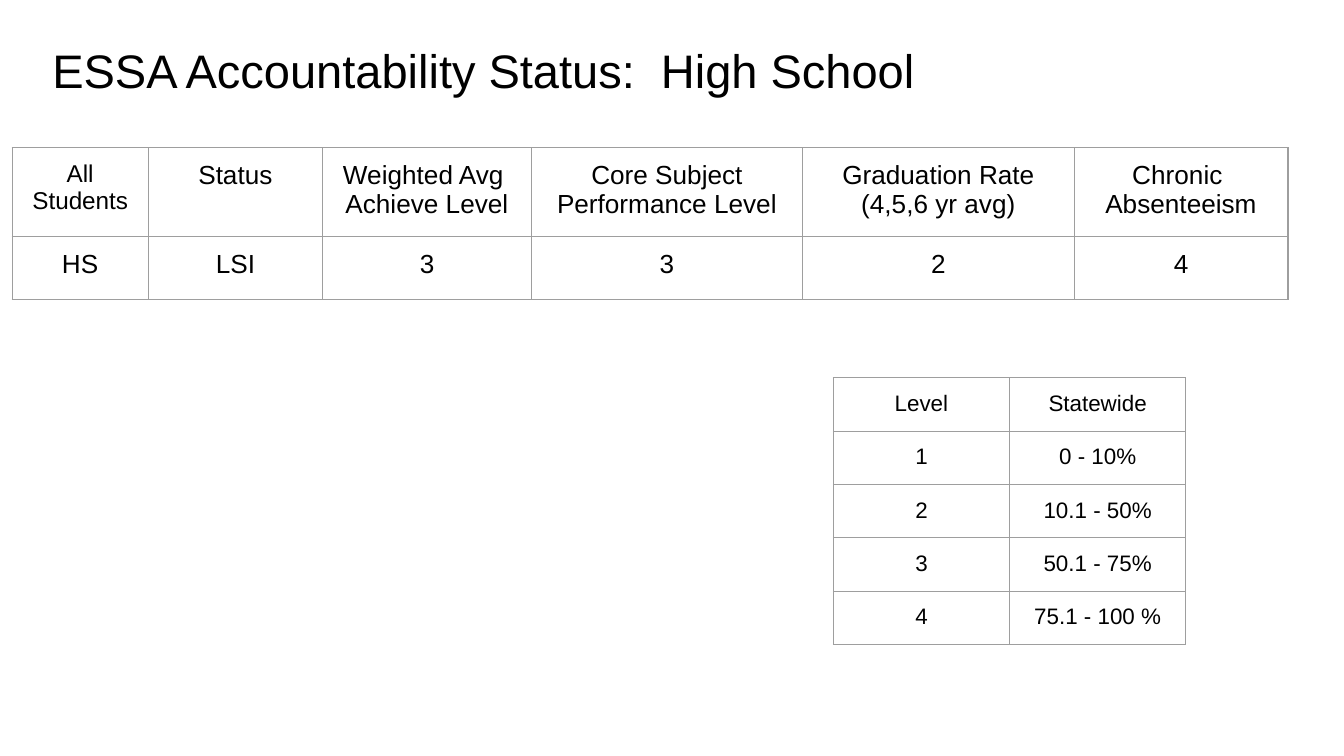
from lxml.etree import SubElement
from pptx import Presentation
from pptx.dml.color import RGBColor
from pptx.enum.text import MSO_ANCHOR, PP_ALIGN
from pptx.oxml.ns import qn
from pptx.util import Cm, Pt

FONT = "Arial"
COLORS = {"text": "000000", "border": "9E9E9E"}
INSET = Cm(0.25)

STATUS_ROWS = [
    ["All\nStudents", "Status", "Weighted Avg \nAchieve Level",
     "Core Subject\nPerformance Level", "Graduation Rate\n(4,5,6 yr avg)",
     "Chronic \nAbsenteeism"],
    ["HS", "LSI", "3", "3", "2", "4"],
]
LEVEL_ROWS = [
    ["Level", "Statewide"],
    ["1", "0 - 10%"],
    ["2", "10.1 - 50%"],
    ["3", "50.1 - 75%"],
    ["4", "75.1 - 100 %"],
]


def write_text(tf, text, size, align):
    for i, line in enumerate(text.split("\n")):
        p = tf.add_paragraph() if i else tf.paragraphs[0]
        p.alignment = align
        r = p.add_run()
        r.text = line
        r.font.name = FONT
        r.font.size = Pt(size)
        r.font.color.rgb = RGBColor.from_string(COLORS["text"])


def set_insets(box):
    box.margin_left = box.margin_right = INSET
    box.margin_top = box.margin_bottom = INSET


def add_title(s, text):
    sp = s.shapes.add_textbox(Cm(0.74), Cm(0.51), Cm(23.67), Cm(1.6))
    tf = sp.text_frame
    tf.word_wrap = True
    tf.vertical_anchor = MSO_ANCHOR.BOTTOM
    set_insets(tf)
    write_text(tf, text, 25.2, PP_ALIGN.LEFT)


def set_borders(cell):
    props = cell._tc.get_or_add_tcPr()
    for i, side in enumerate(("a:lnL", "a:lnR", "a:lnT", "a:lnB")):
        ln = props.makeelement(qn(side), {"w": str(Pt(0.75))})
        fill = SubElement(ln, qn("a:solidFill"))
        SubElement(fill, qn("a:srgbClr"), val=COLORS["border"])
        props.insert(i, ln)


def add_grid(s, left, top, widths, heights, rows, size, first_size=None):
    frame = s.shapes.add_table(len(rows), len(widths), Cm(left), Cm(top),
                               Cm(sum(widths)), Cm(sum(heights)))
    table = frame.table
    table.first_row = table.horz_banding = False
    for column, width in zip(table.columns, widths):
        column.width = Cm(width)
    for row, height, texts in zip(table.rows, heights, rows):
        row.height = Cm(height)
        for cell, text in zip(row.cells, texts):
            cell.fill.background()
            set_borders(cell)
            set_insets(cell)
            write_text(cell.text_frame, text, first_size or size, PP_ALIGN.CENTER)
            first_size = None


def main():
    prs = Presentation()
    prs.slide_width, prs.slide_height = Cm(25.4), Cm(14.29)
    s = prs.slides.add_slide(prs.slide_layouts[6])
    add_title(s, "ESSA Accountability Status:  High School")
    add_grid(s, 0.23, 2.79, [2.57, 3.3, 3.94, 5.13, 5.13, 4.04], [1.63, 1.19],
             STATUS_ROWS, 14, first_size=13)
    add_grid(s, 15.75, 7.14, [3.33] * 2, [0.98] * 5, LEVEL_ROWS, 12)
    prs.save("out.pptx")


if __name__ == "__main__":
    main()
